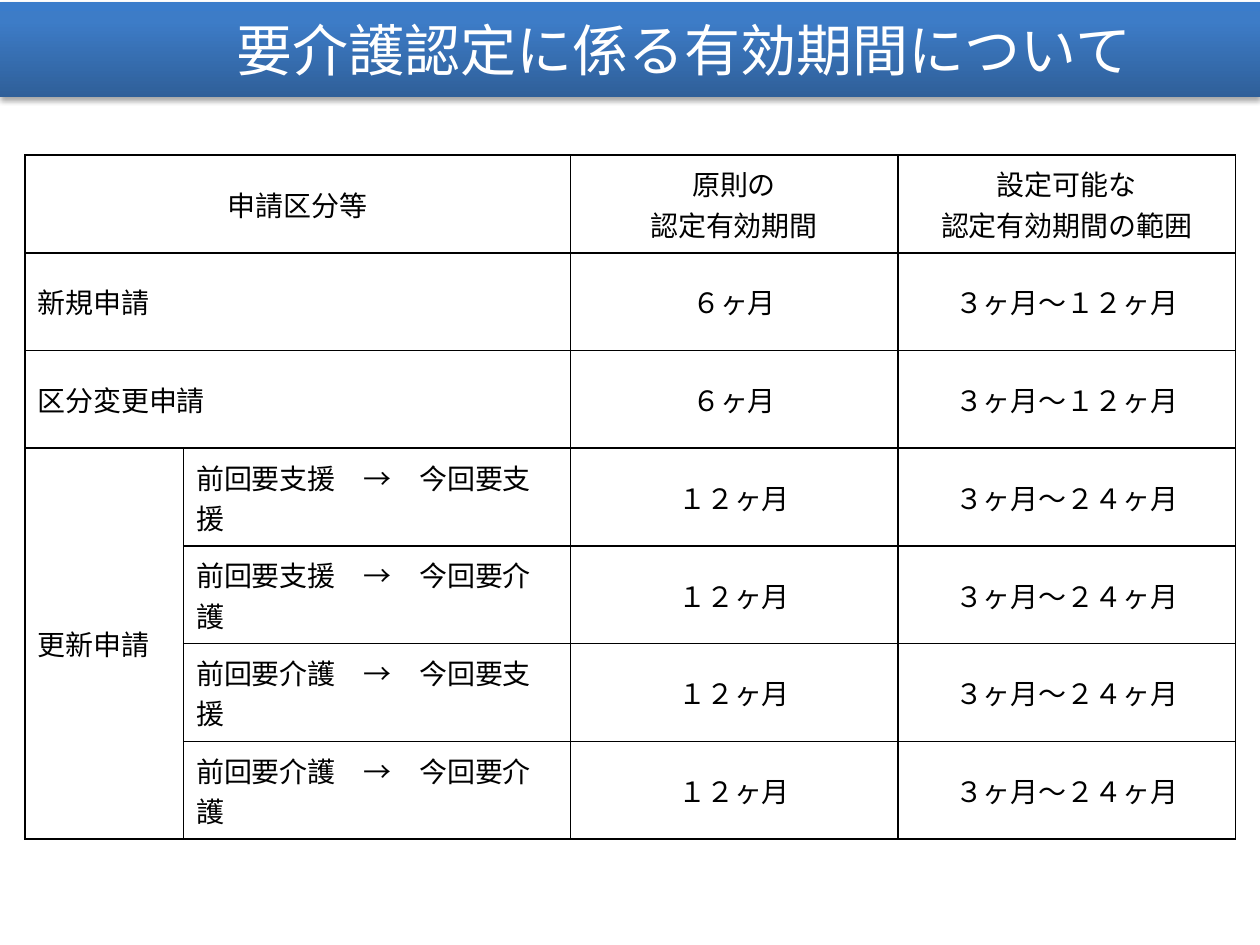
from lxml.etree import SubElement
from pptx import Presentation
from pptx.dml.color import RGBColor
from pptx.enum.text import MSO_ANCHOR, MSO_AUTO_SIZE, PP_ALIGN
from pptx.oxml.ns import qn
from pptx.util import Pt

BLACK, WHITE = "000000", "FFFFFF"
BANNER_STOPS = [(0, "2F5F99"), (80, "3D7CC7"), (100, "3A7CCB")]
COLUMN_WIDTHS = [90.7, 221, 187.2, 193]
PERIODS = [
    ("申請区分等", "", "原則の\n認定有効期間", "設定可能な\n認定有効期間の範囲"),
    ("新規申請", "", "６ヶ月", "３ヶ月～１２ヶ月"),
    ("区分変更申請", "", "６ヶ月", "３ヶ月～１２ヶ月"),
] + [
    ("" if index else "更新申請", f"{previous}　→　{current}", "１２ヶ月", "３ヶ月～２４ヶ月")
    for index, (previous, current) in enumerate(
        (previous, current)
        for previous in ("前回要支援", "前回要介護")
        for current in ("今回要支援", "今回要介護")
    )
]


def rgb(color):
    return RGBColor.from_string(color)


def add_xml(parent, tag, **attributes):
    return SubElement(parent, qn(tag), {key: str(value) for key, value in attributes.items()})


def style_text(text_frame, font_name, size, color, align):
    for paragraph in text_frame.paragraphs:
        paragraph.alignment = align
        for run in paragraph.runs:
            run.font.name = font_name
            run.font.size = Pt(size)
            run.font.bold = False
            run.font.color.rgb = rgb(color)


def fill_banner(properties):
    """Add the vertical gradient and the soft shadow below it."""
    gradient = add_xml(properties, "a:gradFill", rotWithShape=1)
    stops = add_xml(gradient, "a:gsLst")
    for position, color in BANNER_STOPS:
        stop = add_xml(stops, "a:gs", pos=position * 1000)
        add_xml(stop, "a:srgbClr", val=color)
    add_xml(gradient, "a:lin", ang=270 * 60000, scaled=0)
    add_xml(add_xml(properties, "a:ln"), "a:noFill")
    effects = add_xml(properties, "a:effectLst")
    shadow = add_xml(effects, "a:outerShdw", blurRad=Pt(3.1), dist=Pt(1.8),
                     dir=90 * 60000, rotWithShape=0)
    shade = add_xml(shadow, "a:srgbClr", val=BLACK)
    add_xml(shade, "a:alpha", val=35000)


def place_title(slide, left, top, width, height):
    title = slide.shapes.title
    title.left, title.top = Pt(left), Pt(top)
    title.width, title.height = Pt(width), Pt(height)
    geometry = add_xml(title.element.spPr, "a:prstGeom", prst="rect")
    add_xml(geometry, "a:avLst")
    fill_banner(title.element.spPr)
    frame = title.text_frame
    frame.text = "要介護認定に係る有効期間について"
    frame.auto_size = MSO_AUTO_SIZE.NONE
    frame.word_wrap = True
    frame.vertical_anchor = MSO_ANCHOR.MIDDLE
    frame.margin_left = Pt(135.2)
    style_text(frame, "Calibri", 32, WHITE, PP_ALIGN.LEFT)


def outline_cell(cell):
    properties = cell._tc.get_or_add_tcPr()
    for side in ("a:lnL", "a:lnR", "a:lnT", "a:lnB"):
        line = add_xml(properties, side, w=Pt(1))
        add_xml(add_xml(line, "a:solidFill"), "a:srgbClr", val=BLACK)
    cell.fill.background()


def place_period_table(slide, left, top, width, height):
    table = slide.shapes.add_table(len(PERIODS), len(COLUMN_WIDTHS), Pt(left), Pt(top),
                                   Pt(width), Pt(height)).table
    table.first_row = table.horz_banding = False
    for column, column_width in zip(table.columns, COLUMN_WIDTHS):
        column.width = Pt(column_width)
    for row_index, entries in enumerate(PERIODS):
        table.rows[row_index].height = Pt(height / len(PERIODS))
        for column_index, entry in enumerate(entries):
            cell = table.cell(row_index, column_index)
            cell.text = entry
            cell.vertical_anchor = MSO_ANCHOR.MIDDLE
            centred = row_index == 0 or column_index >= 2
            style_text(cell.text_frame, "Arial", 16, BLACK,
                       PP_ALIGN.CENTER if centred else PP_ALIGN.LEFT)
            outline_cell(cell)
    for row_index in range(3):
        table.cell(row_index, 0).merge(table.cell(row_index, 1))
    table.cell(3, 0).merge(table.cell(len(PERIODS) - 1, 0))


def main():
    presentation = Presentation()
    presentation.slide_width, presentation.slide_height = Pt(720), Pt(540)
    slide = presentation.slides.add_slide(presentation.slide_layouts[5])
    place_period_table(slide, 14.2, 88.6, sum(COLUMN_WIDTHS), 391)
    place_title(slide, 0, 0.9, 720, 54.7)
    presentation.save("out.pptx")


if __name__ == "__main__":
    main()
